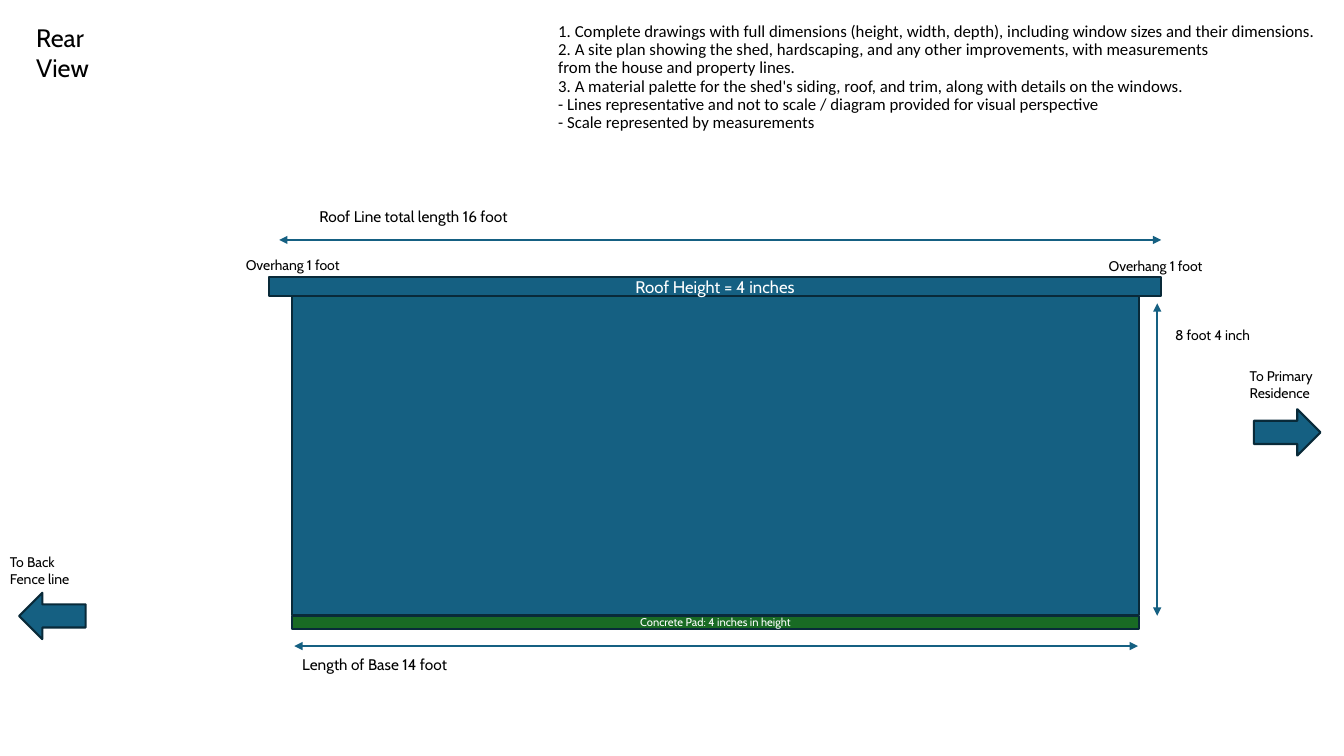
import dataclasses

import pptx
import pptx.dml.color
import pptx.enum.shapes
import pptx.enum.text
import pptx.oxml.ns
import pptx.oxml.xmlchemy
import pptx.slide
import pptx.text.text
import pptx.util

Pt = pptx.util.Pt
Form = pptx.enum.shapes.MSO_SHAPE
Align = pptx.enum.text.PP_ALIGN
Anchor = pptx.enum.text.MSO_ANCHOR
Fit = pptx.enum.text.MSO_AUTO_SIZE

COLORS = {"blue": "156082", "edge": "092A39", "green": "196B24",
          "white": "FFFFFF", "black": "000000"}


@dataclasses.dataclass
class Block:
    form: Form
    left: float
    top: float
    width: float
    height: float
    fill: str = "blue"
    text: str = ""
    size: float = 12


@dataclasses.dataclass
class Label:
    text: str
    left: float
    top: float
    width: float
    height: float
    size: float = 10
    wrap: bool = True


@dataclasses.dataclass
class Measure:
    left: float
    top: float
    right: float
    bottom: float


WALL_LEFT, WALL_WIDTH, PAD_TOP = 208.8, 604.8, 439.9

BLOCKS = [
    Block(Form.RECTANGLE, WALL_LEFT, 209.5, WALL_WIDTH, 229.7),
    Block(Form.RECTANGLE, 192.2, 198, 637.2, 13.7, "blue", "Roof Height = 4 inches"),
    Block(Form.RECTANGLE, WALL_LEFT, PAD_TOP, WALL_WIDTH, 9.4, "green",
          "Concrete Pad: 4 inches in height", 8),
    Block(Form.RIGHT_ARROW, 895.7, 292.3, 47.5, 33.1),
    Block(Form.LEFT_ARROW, 13.7, 423.4, 47.5, 33.1),
]

MEASURES = [
    Measure(210.2, 461.5, 812.9, 461.5),
    Measure(199.4, 171.4, 829.4, 171.4),
    Measure(826.6, 216.7, 826.6, PAD_TOP),
]

LABELS = [
    Label("Rear View", 18.7, 12.2, 87.1, 26.6, 18),
    Label("Overhang 1 foot", 168.5, 180, 83.5, 19.4, wrap=False),
    Label("Overhang 1 foot", 784.8, 180.7, 83.5, 19.4, wrap=False),
    Label("To Primary Residence", 885.6, 259.2, 64.8, 31.7),
    Label("To Back Fence line", 0, 391.7, 63.4, 31.7),
    Label("Length of Base 14 foot", WALL_LEFT, 464.4, 318.2, 20.9, 11),
    Label("Roof Line total length 16 foot", 221, 144.7, 270, 20.9, 11),
    Label("8 foot 4 inch", 832.3, 229.7, 74.2, 19.4),
]

NOTES = [
    "1. Complete drawings with full dimensions (height, width, depth), "
    "including window sizes and their dimensions.",
    "2. A site plan showing the shed, hardscaping, and any other improvements, "
    "with measurements",
    "from the house and property lines.",
    "3. A material palette for the shed's siding, roof, and trim, "
    "along with details on the windows.",
    "- Lines representative and not to scale / diagram provided for visual perspective",
    "- Scale represented by measurements",
]


def get_color(name: str) -> pptx.dml.color.RGBColor:
    return pptx.dml.color.RGBColor.from_string(COLORS[name])


def style_text(frame: pptx.text.text.TextFrame, size: float, color: str,
               face: str = "Cabin") -> None:
    for line in frame.paragraphs:
        for run in line.runs:
            run.font.size = Pt(size)
            run.font.name = face
            run.font.color.rgb = get_color(color)


def draw_block(slide: pptx.slide.Slide, block: Block) -> None:
    shape = slide.shapes.add_shape(block.form, Pt(block.left), Pt(block.top),
                                   Pt(block.width), Pt(block.height))
    shape.shadow.inherit = False
    shape.fill.solid()
    shape.fill.fore_color.rgb = get_color(block.fill)
    shape.line.color.rgb = get_color("edge")
    shape.line.width = Pt(1.5)
    if block.text:
        frame = shape.text_frame
        frame.text = block.text
        frame.vertical_anchor = Anchor.MIDDLE
        frame.paragraphs[0].alignment = Align.CENTER
        style_text(frame, block.size, "white")


def draw_measure(slide: pptx.slide.Slide, span: Measure) -> None:
    line = slide.shapes.add_connector(
        pptx.enum.shapes.MSO_CONNECTOR.STRAIGHT,
        Pt(span.left), Pt(span.top), Pt(span.right), Pt(span.bottom))
    line.line.color.rgb = get_color("blue")
    line.line.width = Pt(1.5)
    props = line.element.spPr
    stroke = props.find(pptx.oxml.ns.qn("a:ln"))
    for end in ("a:headEnd", "a:tailEnd"):
        tip = pptx.oxml.xmlchemy.OxmlElement(end)
        tip.set("type", "triangle")
        stroke.append(tip)
    props.append(pptx.oxml.xmlchemy.OxmlElement("a:effectLst"))


def draw_label(slide: pptx.slide.Slide, label: Label) -> None:
    box = slide.shapes.add_textbox(Pt(label.left), Pt(label.top),
                                   Pt(label.width), Pt(label.height))
    frame = box.text_frame
    frame.text = label.text
    frame.word_wrap = label.wrap
    frame.auto_size = Fit.SHAPE_TO_FIT_TEXT
    style_text(frame, label.size, "black")


def draw_notes(slide: pptx.slide.Slide) -> None:
    box = slide.shapes.add_textbox(Pt(391.7), Pt(5), Pt(561.6), Pt(100.8))
    frame = box.text_frame
    frame.word_wrap = True
    frame.vertical_anchor = Anchor.MIDDLE
    notes = frame.paragraphs[0]
    notes.text = "\n".join(NOTES)
    notes.line_spacing = 0.9
    style_text(frame, 12, "black", "Calibri")


def main() -> None:
    deck = pptx.Presentation()
    deck.slide_width = Pt(960)
    deck.slide_height = Pt(540)
    slide = deck.slides.add_slide(deck.slide_layouts[6])
    for block in BLOCKS:
        draw_block(slide, block)
    for span in MEASURES:
        draw_measure(slide, span)
    for label in LABELS:
        draw_label(slide, label)
    draw_notes(slide)
    deck.save("out.pptx")


if __name__ == "__main__":
    main()
